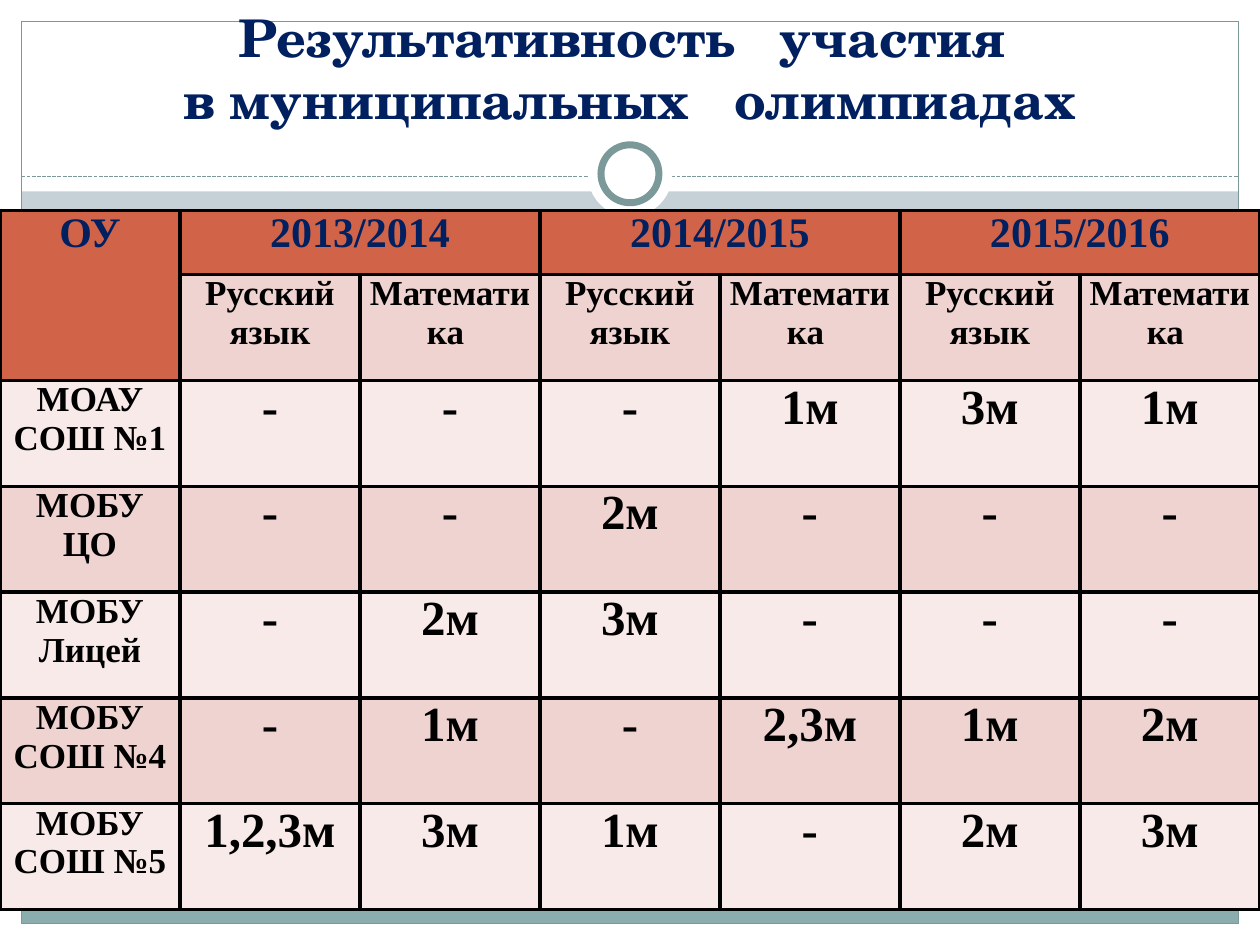
import pptx
import pptx.util
import pptx.dml.color
import pptx.enum.dml
import pptx.enum.shapes
import pptx.enum.text
import pptx.oxml
import pptx.oxml.ns
from dataclasses import dataclass
from typing import Optional

COLORS = {
    "backdrop": "C5D1D7", "white": "FFFFFF", "band": "8CADAE", "teal": "7C999A",
    "navy": "002060", "black": "000000", "header": "D16349",
    "row_dark": "EED3D0", "row_light": "F7EAE9",
}
TITLE_FONT = "TeX Gyre Schola"
TABLE_FONT = "Times New Roman"
SHAPES = pptx.enum.shapes.MSO_SHAPE
WIDTH, HEIGHT = pptx.util.Inches(10), pptx.util.Inches(7.5)


@dataclass
class Panel:
    """A preset shape; lengths are percentages of the slide's size."""
    left: float
    top: float
    width: float
    height: float
    fill: Optional[str] = None
    line: Optional[str] = None
    weight: float = 0.75
    kind: int = SHAPES.RECTANGLE


SIDE, EDGE = 1.7, 2.27  # frame margins, percent of width and of height
FRAME_WIDTH = 100 - 2 * SIDE
PANELS = [
    Panel(0, 100 - EDGE, 100, EDGE, "white"),
    Panel(0, 0, 100, 20.27, "white"),
    Panel(0, 0, SIDE, 100, "white"),
    Panel(100 - SIDE, 0, SIDE, 100, "white"),
    Panel(SIDE, 93.2, FRAME_WIDTH, 4.53, "band"),
    Panel(SIDE, EDGE, FRAME_WIDTH, 100 - 2 * EDGE, line="teal"),
]
CIRCLES = [
    Panel(46.65, 14, 6.7, 8.93, "white", kind=SHAPES.OVAL),
    Panel(47.7, 15.33, 4.6, 6.13, "white", "teal", 4, SHAPES.OVAL),
]
# Each title line is a pair of phrases with a wide gap between them
TITLE = [("Результативность", "участия "), ("в муниципальных", "олимпиадах")]
YEARS = ["2013/2014", "2014/2015", "2015/2016"]
SUBJECTS = ["Русский язык", "Математика "]
RESULTS = [
    ("МОАУ СОШ №1", "-", "-", "-", "1м", "3м", "1м"),
    ("МОБУ ЦО", "-", "-", "2м", "-", "-", "-"),
    ("МОБУ Лицей", "-", "2м", "3м", "-", "-", "-"),
    ("МОБУ СОШ №4", "-", "1м", "-", "2,3м", "1м", "2м"),
    ("МОБУ СОШ №5", "1,2,3м", "3м", "1м", "-", "2м", "3м"),
]


def across(percent: float) -> int:
    return round(WIDTH * percent / 100)


def down(percent: float) -> int:
    return round(HEIGHT * percent / 100)


def color(name: str) -> pptx.dml.color.RGBColor:
    return pptx.dml.color.RGBColor.from_string(COLORS[name])


def write(para, text: str, *, size: float, font: str, ink: str, tracking: float = 0) -> None:
    """Add a bold span to a centred paragraph; tracking is in points."""
    para.alignment = pptx.enum.text.PP_ALIGN.CENTER
    span = para.add_run()
    span.text = text
    span.font.size = pptx.util.Pt(size)
    span.font.name = font
    span.font.bold = True
    span.font.color.rgb = color(ink)
    if tracking:
        span.font._element.set("spc", str(round(tracking * 100)))


def draw_panel(page, panel: Panel) -> None:
    shape = page.shapes.add_shape(panel.kind, across(panel.left), down(panel.top),
                                  across(panel.width), down(panel.height))
    shape.shadow.inherit = False
    if panel.fill:
        shape.fill.solid()
        shape.fill.fore_color.rgb = color(panel.fill)
    else:
        shape.fill.background()
    if panel.line:
        shape.line.color.rgb = color(panel.line)
        shape.line.width = pptx.util.Pt(panel.weight)
    else:
        shape.line.fill.background()


def draw_divider(page) -> None:
    divider = page.shapes.add_connector(pptx.enum.shapes.MSO_CONNECTOR.STRAIGHT,
                                        across(SIDE), down(18.67),
                                        across(100 - SIDE), down(18.67))
    divider.line.color.rgb = color("teal")
    divider.line.width = pptx.util.Pt(0.75)
    divider.line.dash_style = pptx.enum.dml.MSO_LINE.SQUARE_DOT
    divider._element.spPr.append(pptx.oxml.parse_xml(
        f'<a:effectLst {pptx.oxml.ns.nsdecls("a")}/>'))


def draw_title(page) -> None:
    box = page.shapes.add_textbox(across(3.33), down(3.33), across(93.33), down(11.07))
    frame = box.text_frame
    frame.word_wrap = True
    frame.vertical_anchor = pptx.enum.text.MSO_ANCHOR.BOTTOM
    style = dict(size=29.7, font=TITLE_FONT, ink="navy")
    for index, (start, end) in enumerate(TITLE):
        para = frame.add_paragraph() if index else frame.paragraphs[0]
        write(para, start, **style)
        write(para, " ", tracking=16.6, **style)
        write(para, end, **style)


def style_cell(cell, fill: str) -> None:
    """Set margins, black borders and fill; borders must come before the fill."""
    cell.margin_left = cell.margin_right = pptx.util.Inches(0.07)
    cell.margin_top = cell.margin_bottom = 0
    properties = cell._tc.get_or_add_tcPr()
    for side in "LRTB":
        properties.append(pptx.oxml.parse_xml(
            f'<a:ln{side} {pptx.oxml.ns.nsdecls("a")} w="{pptx.util.Pt(2.25)}"><a:solidFill>'
            f'<a:srgbClr val="{COLORS["black"]}"/></a:solidFill></a:ln{side}>'))
    cell.fill.solid()
    cell.fill.fore_color.rgb = color(fill)


def draw_table(page) -> None:
    heights = [6.8] + [11.2] * (len(RESULTS) + 1)
    columns = 1 + len(YEARS) * len(SUBJECTS)
    table = page.shapes.add_table(len(heights), columns, 0, down(22.27),
                                  WIDTH, down(sum(heights))).table
    table.first_row = table.horz_banding = False
    for column in table.columns:
        column.width = round(WIDTH / columns)
    for row, height in zip(table.rows, heights):
        row.height = down(height)

    # Header row: a year above each group of subjects
    year_cells = [text for year in YEARS for text in [year] + [""] * (len(SUBJECTS) - 1)]
    rows = [["ОУ"] + year_cells, [""] + SUBJECTS * len(YEARS), *RESULTS]
    for row, texts in enumerate(rows):
        for column, text in enumerate(texts):
            cell = table.cell(row, column)
            heading = row == 0 or (row == 1 and column == 0)
            style_cell(cell, "header" if heading else "row_dark" if row % 2 else "row_light")
            if text:
                size = 24 if heading else 20 if row == 1 or column == 0 else 28
                write(cell.text_frame.paragraphs[0], text, size=size, font=TABLE_FONT,
                      ink="navy" if heading else "black")
    table.cell(0, 0).merge(table.cell(1, 0))
    for first in range(1, columns, len(SUBJECTS)):
        table.cell(0, first).merge(table.cell(0, first + len(SUBJECTS) - 1))


def main() -> None:
    deck = pptx.Presentation()
    deck.slide_width, deck.slide_height = WIDTH, HEIGHT
    page = deck.slides.add_slide(deck.slide_layouts[6])
    page.background.fill.solid()
    page.background.fill.fore_color.rgb = color("backdrop")

    # Frame, divider and ring
    for panel in PANELS:
        draw_panel(page, panel)
    draw_divider(page)
    for circle in CIRCLES:
        draw_panel(page, circle)

    # Content
    draw_title(page)
    draw_table(page)
    deck.save("out.pptx")


if __name__ == "__main__":
    main()
